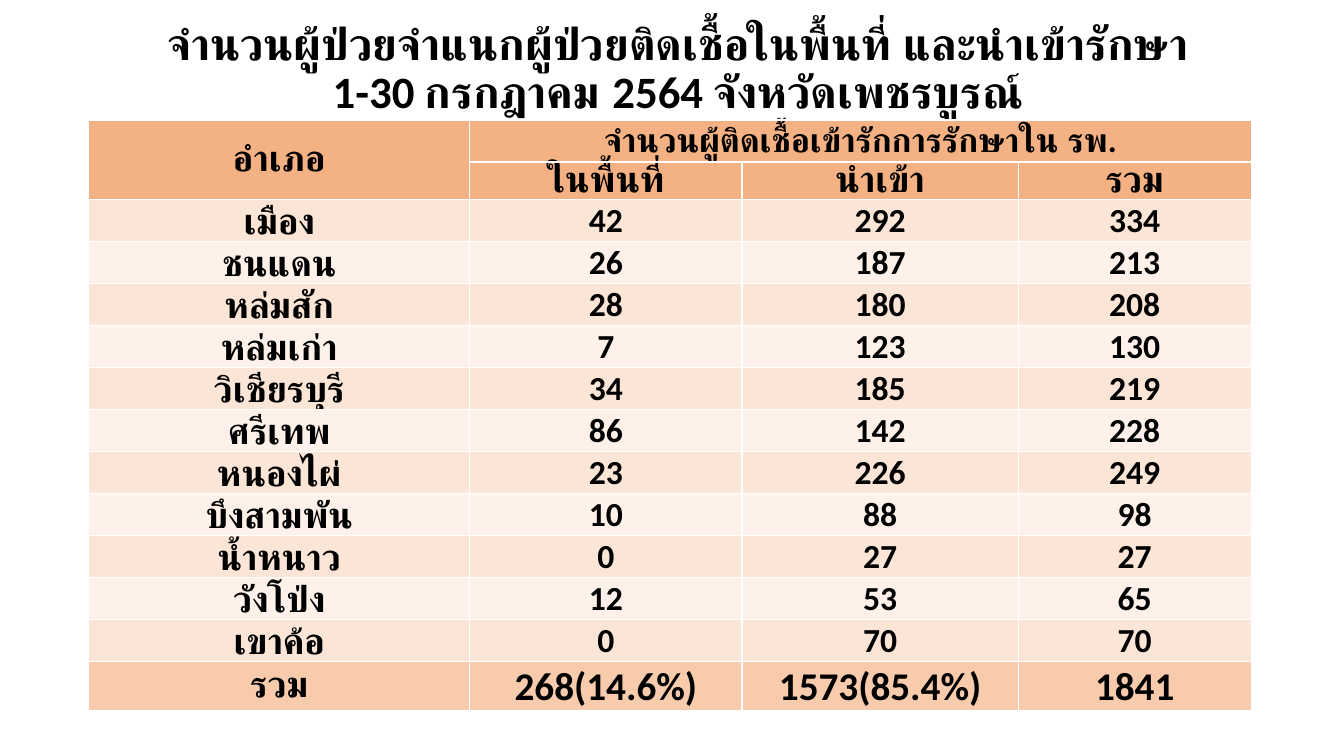
import pptx
import pptx.dml.color
import pptx.enum.text
import pptx.oxml
import pptx.oxml.ns
import pptx.util
from pptx.util import Inches

FONT = "Calibri"
BLACK, WHITE = "000000", "FFFFFF"
HEADER, TOTAL = "F4B183", "F8CBAD"
BANDS = ("FBE5D6", "FDF1E9")
MIDDLE = pptx.enum.text.MSO_ANCHOR.MIDDLE
BOTTOM = pptx.enum.text.MSO_ANCHOR.BOTTOM

TITLE = (
    "จำนวนผู้ป่วยจำแนกผู้ป่วยติดเชื้อในพื้นที่ และนำเข้ารักษา",
    "1-30 กรกฎาคม 2564 จังหวัดเพชรบูรณ์",
)
GROUP_HEADING = "จำนวนผู้ติดเชื้อเข้ารักการรักษาใน รพ."
HEADINGS = ("อำเภอ", "ในพื้นที่", "นำเข้า", "รวม")
DISTRICTS = (
    ("เมือง", 42, 292, 334),
    ("ชนแดน", 26, 187, 213),
    ("หล่มสัก", 28, 180, 208),
    ("หล่มเก่า", 7, 123, 130),
    ("วิเชียรบุรี", 34, 185, 219),
    ("ศรีเทพ", 86, 142, 228),
    ("หนองไผ่", 23, 226, 249),
    ("บึงสามพัน", 10, 88, 98),
    ("น้ำหนาว", 0, 27, 27),
    ("วังโป่ง", 12, 53, 65),
    ("เขาค้อ", 0, 70, 70),
)
TOTALS = ("รวม", "268(14.6%)", "1573(85.4%)", "1841")
COLUMN_WIDTHS = (3.78, 2.7, 2.74, 2.31)
ROW_HEIGHTS = (0.32, 0.32) + (0.36,) * len(DISTRICTS) + (0.45,)


def rgb(color):
    return pptx.dml.color.RGBColor.from_string(color)


def add_run(p, text, size):
    p.alignment = pptx.enum.text.PP_ALIGN.CENTER
    r = p.add_run()
    r.text = text
    r.font.name = FONT
    r.font.size = pptx.util.Pt(size)
    r.font.bold = True
    r.font.color.rgb = rgb(BLACK)


def set_borders(cell, color):
    """Draw a one-point line on all four sides of the cell."""
    tc_pr = cell._tc.get_or_add_tcPr()
    for i, side in enumerate(("lnL", "lnR", "lnT", "lnB")):
        tc_pr.insert(i, pptx.oxml.parse_xml(
            f'<a:{side} {pptx.oxml.ns.nsdecls("a")} w="12700"><a:solidFill>'
            f'<a:srgbClr val="{color}"/></a:solidFill></a:{side}>'))


def fill_cell(cell, text, size, color, anchor=BOTTOM):
    cell.fill.solid()
    cell.fill.fore_color.rgb = rgb(color)
    set_borders(cell, WHITE)
    cell.margin_left = cell.margin_right = cell.margin_top = Inches(0.01)
    cell.margin_bottom = 0
    cell.vertical_anchor = anchor
    if text:
        add_run(cell.text_frame.paragraphs[0], text, size)


def place_title(s, left, top, width, height):
    sp = s.shapes.title
    sp.left, sp.top = Inches(left), Inches(top)
    sp.width, sp.height = Inches(width), Inches(height)
    tf = sp.text_frame
    tf.word_wrap = True
    tf.vertical_anchor = MIDDLE
    p = tf.paragraphs[0]
    p.line_spacing = 0.9
    add_run(p, TITLE[0], 32)
    p.add_line_break()
    add_run(p, TITLE[1], 32)


def add_patient_table(s, left, top, width):
    table = s.shapes.add_table(
        len(ROW_HEIGHTS), len(COLUMN_WIDTHS), Inches(left), Inches(top),
        Inches(width), Inches(sum(ROW_HEIGHTS))).table
    table.first_row = table.horz_banding = False
    for column, share in zip(table.columns, COLUMN_WIDTHS):
        column.width = Inches(width * share / sum(COLUMN_WIDTHS))
    for row, height in zip(table.rows, ROW_HEIGHTS):
        row.height = Inches(height)

    top_row = (HEADINGS[0], GROUP_HEADING, "", "")
    for c, text in enumerate(top_row):
        fill_cell(table.cell(0, c), text, 24 if c else 26, HEADER, BOTTOM if c else MIDDLE)
    for c, text in enumerate(("",) + HEADINGS[1:]):
        fill_cell(table.cell(1, c), text, 26, HEADER)
    table.cell(0, 0).merge(table.cell(1, 0))
    table.cell(0, 1).merge(table.cell(0, 3))

    for i, district in enumerate(DISTRICTS):
        for c, value in enumerate(district):
            # The first district's name and figures follow the same sizes as the rest.
            fill_cell(table.cell(i + 2, c), str(value), 24 if c else 26, BANDS[i % 2])
    for c, text in enumerate(TOTALS):
        fill_cell(table.cell(len(ROW_HEIGHTS) - 1, c), text, 28 if c else 26, TOTAL, MIDDLE)


def main():
    prs = pptx.Presentation()
    prs.slide_width, prs.slide_height = Inches(13.33), Inches(7.5)
    s = prs.slides.add_slide(prs.slide_layouts[5])
    place_title(s, 0.62, 0.1, 12.21, 1.19)
    add_patient_table(s, 0.88, 1.19, 11.53)
    prs.save("out.pptx")


if __name__ == "__main__":
    main()
